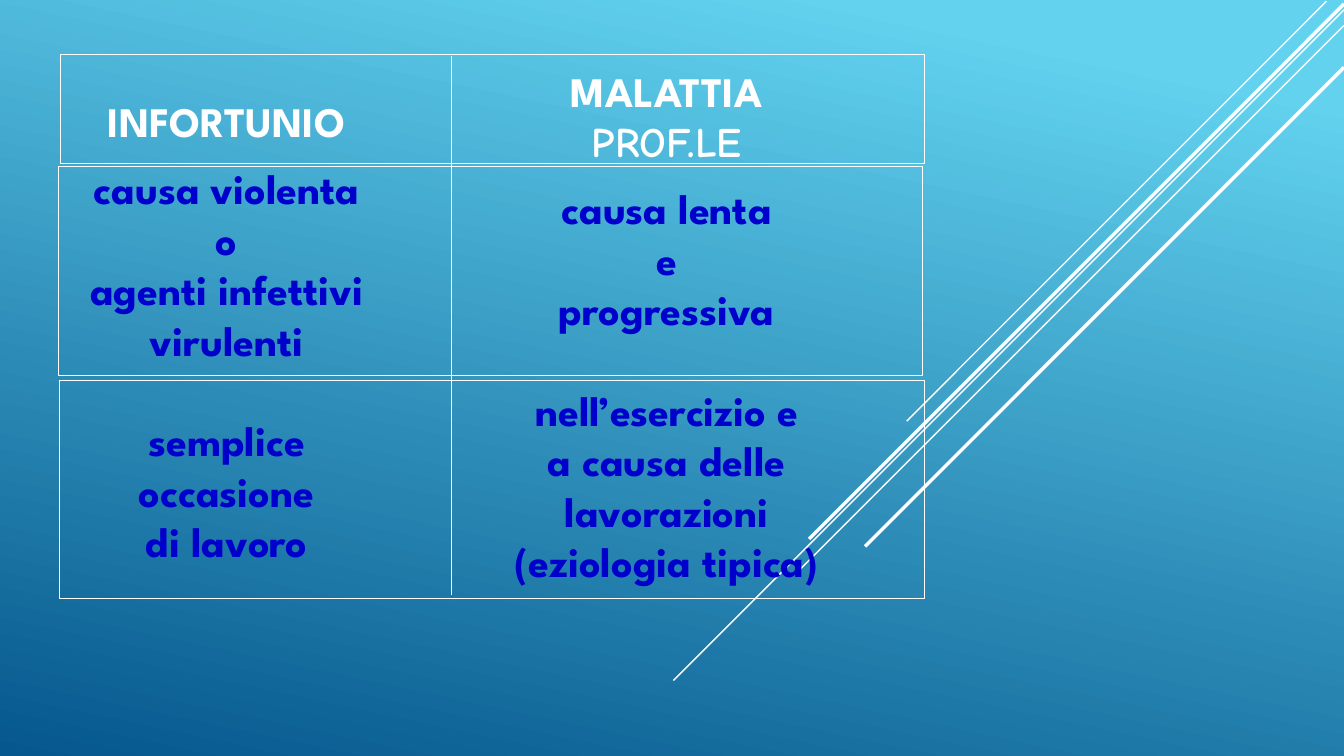
from dataclasses import dataclass

from lxml.etree import SubElement
from pptx import Presentation
from pptx.dml.color import RGBColor
from pptx.enum.shapes import MSO_CONNECTOR as Connector, MSO_SHAPE as Shape
from pptx.enum.text import MSO_ANCHOR as Anchor, PP_ALIGN as Align
from pptx.oxml.ns import qn
from pptx.util import Cm, Pt

COLORS = {
    "white": "FFFFFF",
    "text": "0000CC",
    "sky": "62D2EF",
    "deep": "05578D",
}
HEADING_FONT = "League Spartan"
LABEL_FONT = "Comic Neue"
TEXT_SIZE = 30
ROW_LEFT_WIDTH = 21.79


@dataclass
class Diagonal:
    """A 45-degree line running down and to the left."""
    x: float
    y: float
    run: float
    width: float


@dataclass
class Line:
    text: str
    color: str = "text"
    font: str = HEADING_FONT
    before: float = 0


@dataclass
class Column:
    left: float
    top: float
    width: float
    height: float
    lines: list[Line]


@dataclass
class Row:
    left: float
    top: float
    height: float


DIAGONALS = [
    Diagonal(33.43, 0.03, 10.58, 1),
    Diagonal(33.87, 0.25, 16.9, 1),
    Diagonal(33.87, 0.64, 13.77, 1),
    Diagonal(33.87, 0.1, 13.48, 2.5),
    Diagonal(33.87, 1.7, 12.07, 2.5),
]
COLUMNS = [
    Column(-5.26, 2.46, 21.95, 11.76, [
        Line("INFORTUNIO", "white"),
        Line("causa violenta", before=12),
        Line("o"),
        Line("agenti infettivi"),
        Line("virulenti"),
        Line("semplice", before=36),
        Line("occasione"),
        Line("di lavoro"),
    ]),
    Column(12.04, 3.89, 9.53, 8.64, [
        Line("MALATTIA", "white"),
        Line("PROF.LE", "white", LABEL_FONT),
        Line("causa lenta", before=12),
        Line("e"),
        Line("progressiva"),
        Line("nell’esercizio e", before=36),
        Line("a causa delle"),
        Line("lavorazioni"),
        Line("(eziologia tipica)"),
    ]),
]
ROWS = [Row(1.52, 1.37, 2.74), Row(1.47, 4.19, 5.28), Row(1.5, 9.58, 5.51)]


def rgb(name: str) -> RGBColor:
    return RGBColor.from_string(COLORS[name])


def paint_background(s) -> None:
    fill = s.background.fill
    fill.gradient()
    fill.gradient_angle = 258
    for stop, position, color in zip(fill.gradient_stops, (0.1, 1), ("sky", "deep")):
        stop.position = position
        stop.color.rgb = rgb(color)


def draw_line(s, x1: float, y1: float, x2: float, y2: float, width: float) -> None:
    line = s.shapes.add_connector(Connector.STRAIGHT, Cm(x1), Cm(y1), Cm(x2), Cm(y2))
    line.line.color.rgb = rgb("white")
    line.line.width = Pt(width)
    SubElement(line._element.spPr, qn("a:effectLst"))


def draw_column(s, column: Column) -> None:
    sp = s.shapes.add_textbox(Cm(column.left), Cm(column.top),
                              Cm(column.width), Cm(column.height))
    tf = sp.text_frame
    tf.word_wrap = True
    tf.vertical_anchor = Anchor.MIDDLE
    tf.text = "\n".join(line.text for line in column.lines)
    for p, line in zip(tf.paragraphs, column.lines):
        p.alignment = Align.CENTER
        if line.before:
            p.space_before = Pt(line.before)
        font = p.runs[0].font
        font.name = line.font
        font.size = Pt(TEXT_SIZE)
        font.bold = True
        font.color.rgb = rgb(line.color)


def draw_row(s, row: Row) -> None:
    sp = s.shapes.add_shape(Shape.RECTANGLE, Cm(row.left), Cm(row.top),
                            Cm(ROW_LEFT_WIDTH), Cm(row.height))
    sp.shadow.inherit = False
    sp.fill.background()
    sp.line.color.rgb = rgb("white")
    sp.line.width = Pt(0.75)


def main() -> None:
    prs = Presentation()
    prs.slide_width, prs.slide_height = Cm(33.87), Cm(19.05)
    s = prs.slides.add_slide(prs.slide_layouts[6])

    # Background and diagonal decoration
    paint_background(s)
    for d in DIAGONALS:
        draw_line(s, d.x, d.y, d.x - d.run, d.y + d.run, d.width)

    # Compared definitions
    for column in COLUMNS:
        draw_column(s, column)

    # Frames and divider
    for row in ROWS:
        draw_row(s, row)
    draw_line(s, 11.38, 1.42, 11.38, 14.99, 0.75)

    prs.save("out.pptx")


if __name__ == "__main__":
    main()
